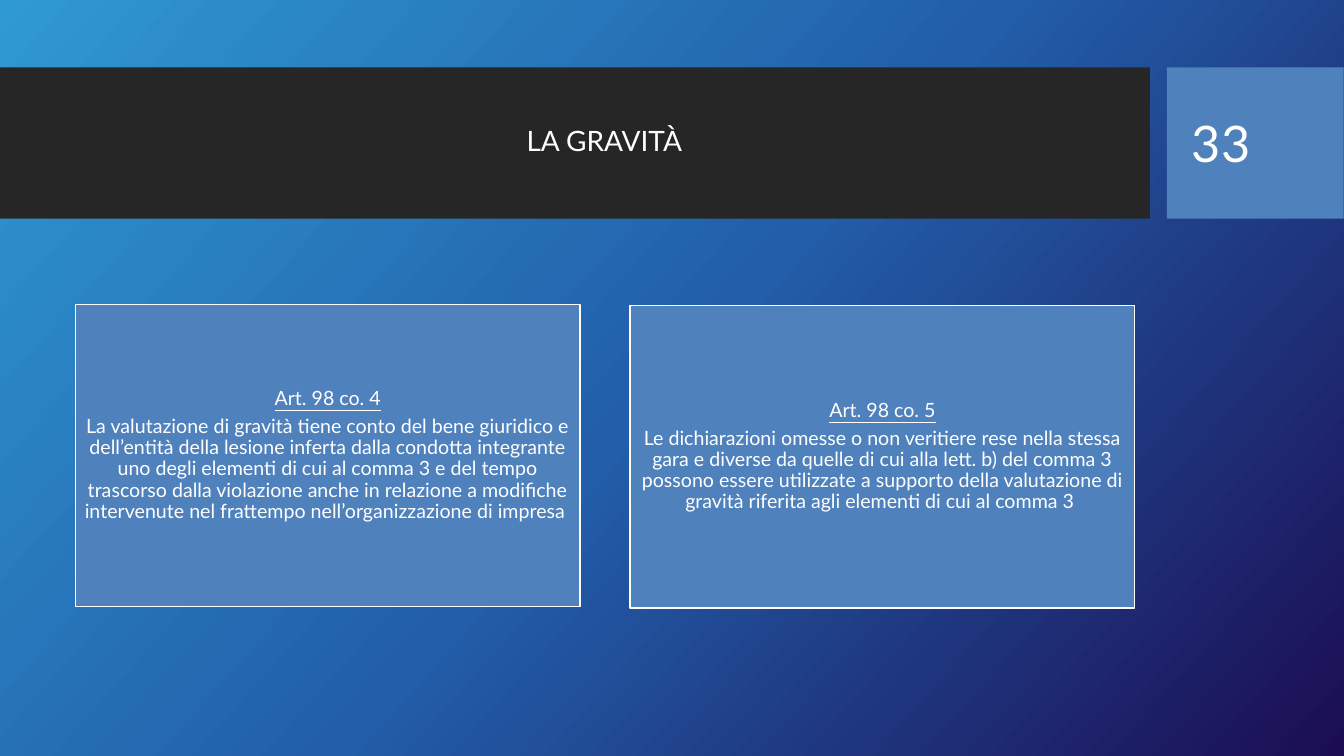
from copy import deepcopy
from pptx import Presentation
from pptx.dml.color import RGBColor
from pptx.enum.shapes import MSO_SHAPE
from pptx.enum.text import MSO_ANCHOR, MSO_AUTO_SIZE, PP_ALIGN
from pptx.oxml.ns import qn
from pptx.util import Cm, Pt


def color(value):
    return RGBColor.from_string(value)


def add_box(left, top, width, height, fill):
    shape = slide.shapes.add_shape(
        MSO_SHAPE.RECTANGLE, Cm(left), Cm(top), Cm(width), Cm(height))
    shape.shadow.inherit = False
    shape.fill.solid()
    shape.fill.fore_color.rgb = color(fill)
    shape.line.fill.background()
    return shape


presentation = Presentation()
presentation.slide_width = Cm(33.87)
presentation.slide_height = Cm(19.05)
slide = presentation.slides.add_slide(presentation.slide_layouts[5])

background = slide.background.fill
background.gradient()
background.gradient_angle = 318
stop_list = slide.element.find(".//" + qn("a:gsLst"))
stop_list.append(deepcopy(stop_list[0]))
gradient = [(0, "2F99D3"), (0.5, "225EA9"), (1, "1B0D53")]
for stop, (position, value) in zip(background.gradient_stops, gradient):
    stop.position = position
    stop.color.rgb = color(value)

add_box(0, 1.7, 28.98, 3.81, "262626")
add_box(29.41, 1.7, 4.45, 3.81, "4F81BD")

title = slide.shapes.title
title.element.getparent().append(title.element)
title.left, title.top, title.width, title.height = Cm(1.88), Cm(2.08), Cm(26.7), Cm(3)
title.text_frame.text = "LA GRAVITÀ"
title.text_frame.auto_size = MSO_AUTO_SIZE.NONE
title.text_frame.vertical_anchor = MSO_ANCHOR.MIDDLE
paragraph = title.text_frame.paragraphs[0]
paragraph.alignment = PP_ALIGN.CENTER
paragraph.line_spacing = 0.9
paragraph.font.name = "Lato"
paragraph.font.size = Pt(20)
paragraph.font.color.rgb = color("FFFFFF")

articles = [
    (1.9, 7.67, "Art. 98 co. 4",
     "La valutazione di gravità tiene conto del bene giuridico e dell’entità "
     "della lesione inferta dalla condotta integrante uno degli elementi di cui "
     "al comma 3 e del tempo trascorso dalla violazione anche in relazione a "
     "modifiche intervenute nel frattempo nell’organizzazione di impresa "),
    (15.88, 7.7, "Art. 98 co. 5",
     "Le dichiarazioni omesse o non veritiere rese nella stessa gara e diverse "
     "da quelle di cui alla lett. b) del comma 3 possono essere utilizzate a "
     "supporto della valutazione di gravità riferita agli elementi di cui al "
     "comma 3 "),
]
for left, top, heading, body in articles:
    card = add_box(left, top, 12.72, 7.62, "4F81BD")
    card.line.color.rgb = color("FFFFFF")
    card.line.width = Pt(1)
    frame = card.text_frame
    frame.word_wrap = True
    frame.vertical_anchor = MSO_ANCHOR.MIDDLE
    frame.margin_left = frame.margin_right = Cm(0.15)
    frame.margin_top = frame.margin_bottom = Cm(0.15)
    frame.text = heading + "\n" + body
    for paragraph in frame.paragraphs:
        paragraph.alignment = PP_ALIGN.CENTER
        paragraph.line_spacing = 0.9
        paragraph.space_after = Pt(5)
        paragraph.font.name = "Lato"
        paragraph.font.size = Pt(14)
        paragraph.font.color.rgb = color("FFFFFF")
    frame.paragraphs[0].font.underline = True

number = slide.shapes.add_textbox(Cm(29.79), Cm(2.08), Cm(3.2), Cm(3.02))
number.text_frame.word_wrap = True
number.text_frame.vertical_anchor = MSO_ANCHOR.MIDDLE
number.text_frame.text = "33"
paragraph = number.text_frame.paragraphs[0]
paragraph.font.name = "Lato"
paragraph.font.size = Pt(36)
paragraph.font.color.rgb = color("FFFFFF")

presentation.save("out.pptx")
